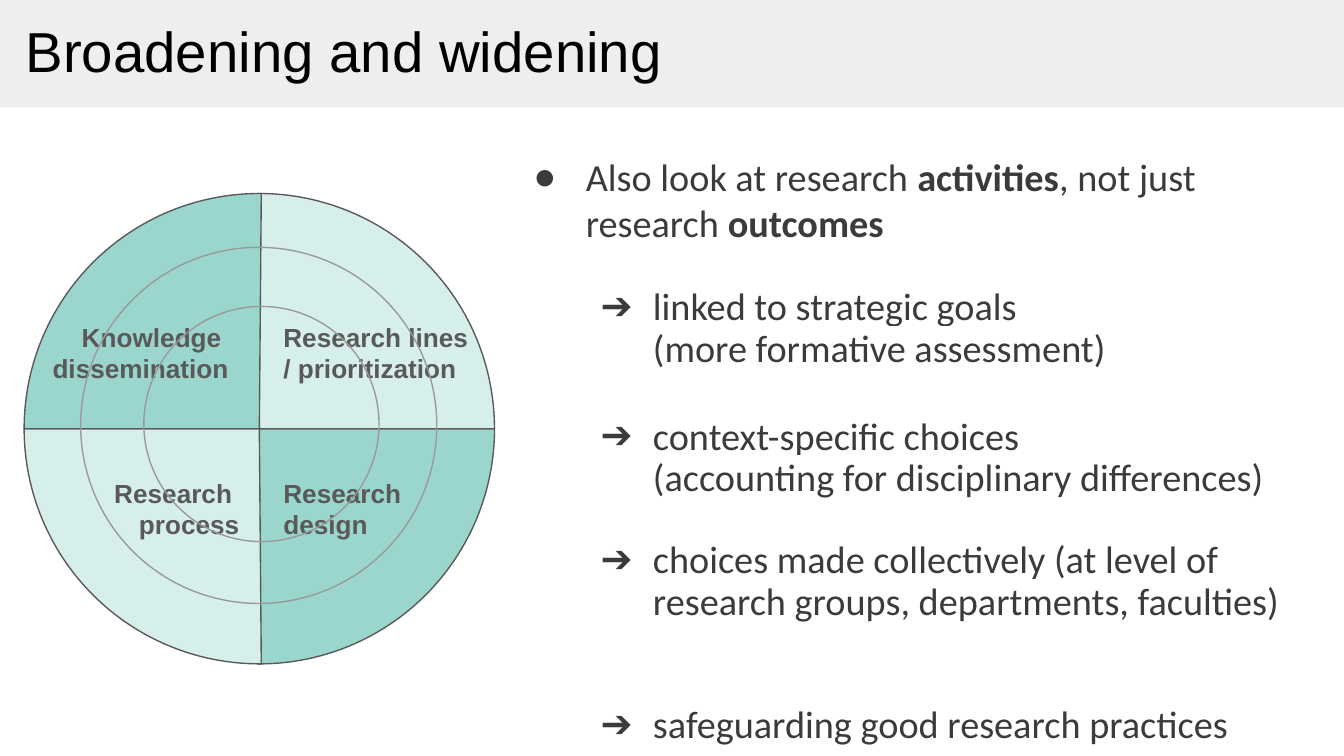
import pptx
import pptx.util
import pptx.dml.color
import pptx.enum.shapes
import pptx.enum.text
import pptx.oxml
import pptx.oxml.ns
from dataclasses import dataclass
from lxml import etree

Inches, Pt = pptx.util.Inches, pptx.util.Pt
Shape = pptx.enum.shapes.MSO_SHAPE
Align = pptx.enum.text.PP_ALIGN
Anchor = pptx.enum.text.MSO_ANCHOR
Color = pptx.dml.color.RGBColor.from_string
qn = pptx.oxml.ns.qn


@dataclass(frozen=True)
class Theme:
    band: str = "EEEEEE"
    title: str = "000000"
    body: str = "3B3B3B"
    back: str = "FFFFFF"
    label: str = "595959"
    dark: str = "9BD6CE"
    light: str = "D7EFEB"
    ring: str = "999999"
    head: str = "Arial"
    text: str = "Calibri"
    big: float = 30.2
    mid: float = 20.5
    small: float = 14


theme = Theme()


def write(para, text, font, color, bold=False, mark=None, **form):
    for key, val in form.items():
        setattr(para, key, val)
    for i, part in enumerate(text.split("*")):
        for j, line in enumerate(part.split("\n")):
            if j:
                para.add_line_break()
            if not line:
                continue
            run = para.add_run()
            run.text = line
            for key, val in {**font, "bold": bold or i % 2 == 1}.items():
                setattr(run.font, key, val)
            run.font.color.rgb = Color(color)
            if mark:
                fill = run._r.rPr.find(qn("a:solidFill"))
                light = etree.Element(qn("a:highlight"))
                etree.SubElement(light, qn("a:srgbClr"), val=theme.back)
                fill.addnext(light)
    if mark:
        props = para._p.get_or_add_pPr()
        props.set("marL", str(Inches(0.5)))
        props.set("indent", str(Inches(-0.39)))
        tint = etree.SubElement(props, qn("a:buClr"))
        etree.SubElement(tint, qn("a:srgbClr"), val=theme.body)
        etree.SubElement(props, qn("a:buFont"), typeface=theme.head)
        etree.SubElement(props, qn("a:buChar"), char=mark)


def frame(*area):
    box = slide.shapes.add_textbox(*map(Inches, area)).text_frame
    form = {"word_wrap": True}
    for side in ("left", "top", "right", "bottom"):
        form["margin_" + side] = Inches(0.1)
    for key, val in form.items():
        setattr(box, key, val)
    return box


deck = pptx.Presentation()
deck.slide_width, deck.slide_height = Inches(10), Inches(10 * 9 / 16)
slide = deck.slides.add_slide(deck.slide_layouts[5])

title = slide.shapes.title
for key, val in {"left": 0, "top": 0, "width": 10, "height": 0.8}.items():
    setattr(title, key, Inches(val))
title.fill.solid()
title.fill.fore_color.rgb = Color(theme.band)
form = {
    "vertical_anchor": Anchor.MIDDLE,
    "margin_left": Inches(0.19),
    "margin_right": Inches(0.07),
    "margin_top": Inches(0.04),
    "margin_bottom": Inches(0.04),
    "auto_size": pptx.enum.text.MSO_AUTO_SIZE.NONE,
}
for key, val in form.items():
    setattr(title.text_frame, key, val)
font = {"name": theme.head, "size": Pt(theme.big)}
write(title.text_frame.paragraphs[0], "Broadening and widening", font, theme.title,
      alignment=Align.LEFT, line_spacing=0.9)

font = {"name": theme.text, "size": Pt(theme.mid)}
lead = frame(3.76, 1.04, 5.89, 0.89)
write(lead.paragraphs[0], "Also look at research *activities*, not just research *outcomes*",
      font, theme.body, mark="●")

points = [
    ("linked to strategic goals \n(more formative assessment)", 0),
    ("context-specific choices \n(accounting for disciplinary differences)", 25),
    ("choices made collectively (at level of research groups, departments, faculties)", 22),
    ("safeguarding good research practices", 44),
]
box = frame(4.26, 2.04, 5.41, 3.31)
for i, (text, gap) in enumerate(points):
    para = box.add_paragraph() if i else box.paragraphs[0]
    write(para, text, font, theme.body, mark="➔", line_spacing=0.9, space_before=Pt(gap))

pies = [
    (0, 90.48, theme.dark),
    (269.52, 0, theme.light),
    (89.52, 180, theme.light),
    (180, 270.48, theme.dark),
]
for start, end, color in pies:
    pie = slide.shapes.add_shape(Shape.PIE, *map(Inches, (0.18, 1.44, 3.5, 3.5)))
    pie.shadow.inherit = False
    pie.adjustments[0], pie.adjustments[1] = start * 0.6, end * 0.6
    pie.fill.solid()
    pie.fill.fore_color.rgb = Color(color)
    pie.line.color.rgb = Color(theme.label)
    pie.line.width = Pt(0.75)

labels = [
    (0.18, 2.29, Align.RIGHT, ["Knowledge ", "dissemination"]),
    (0.26, 3.45, Align.RIGHT, ["Research ", "process"]),
    (2.01, 2.29, Align.LEFT, ["Research lines / prioritization"]),
    (2.01, 3.45, Align.LEFT, ["Research design"]),
]
font = {"name": theme.head, "size": Pt(theme.small)}
for left, top, side, lines in labels:
    box = frame(left, top, 1.62, 0.67)
    for i, line in enumerate(lines):
        para = box.add_paragraph() if i else box.paragraphs[0]
        write(para, line, font, theme.label, bold=True, alignment=side)

for left, top, size in [(0.6, 1.84, 2.65), (1.07, 2.28, 1.75)]:
    ring = slide.shapes.add_shape(Shape.OVAL, *map(Inches, (left, top, size, size)))
    ring.shadow.inherit = False
    ring.fill.background()
    ring.line.color.rgb = Color(theme.ring)
    ring.line.width = Pt(0.75)

deck.save("out.pptx")
